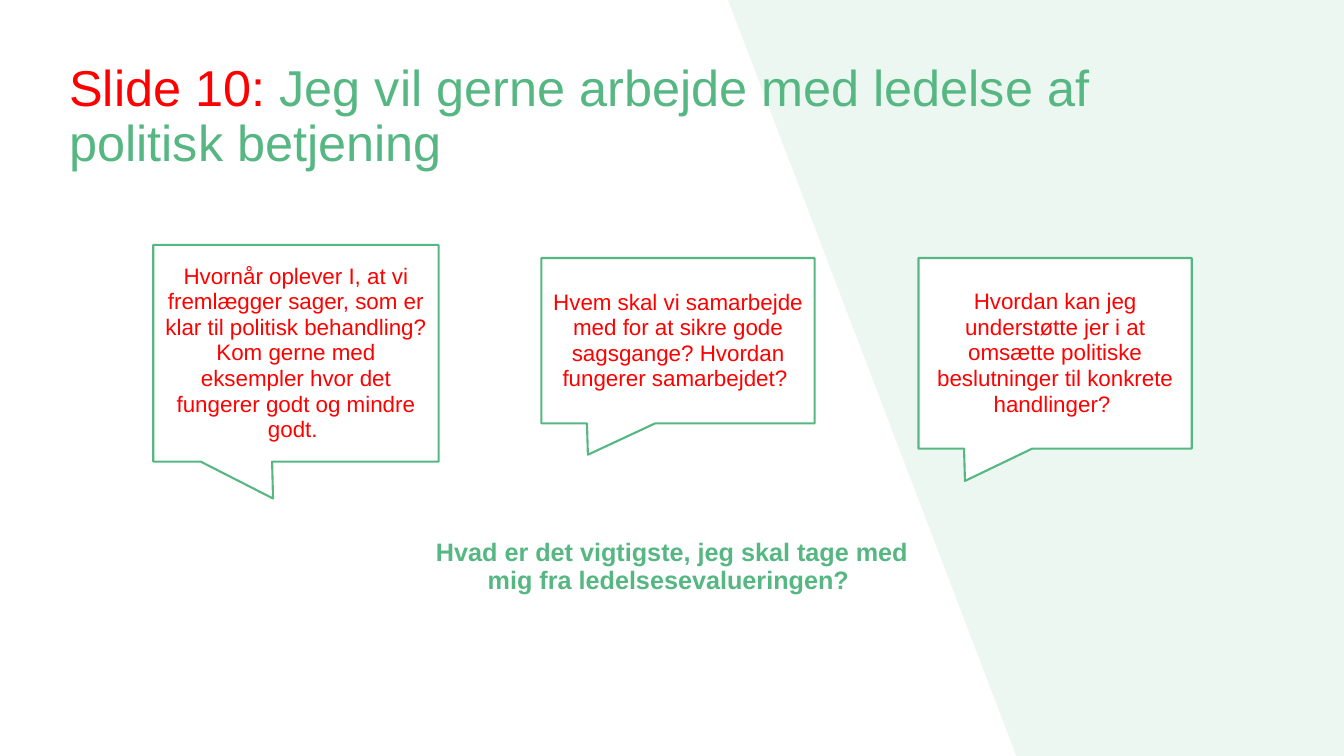
import pptx
import pptx.util
import pptx.dml.color
import pptx.enum.shapes
import pptx.enum.text
import lxml.etree

THEME = {
    "font": "Arial",
    "green": pptx.dml.color.RGBColor(0x56, 0xB7, 0x83),
    "red": pptx.dml.color.RGBColor(0xFF, 0x00, 0x00),
    "white": pptx.dml.color.RGBColor(0xFF, 0xFF, 0xFF),
    "title": 36, "bubble": 16, "closing": 18, "line": 1.5,
}
W, H = 13.33, 7.5
inch, pt = pptx.util.Inches, pptx.util.Pt
align, anchor = pptx.enum.text.PP_ALIGN, pptx.enum.text.MSO_ANCHOR


def write(s, runs, size, spacing, alignment, vertical, bold=False):
    """Fill a shape with one paragraph of (text, colour) runs."""
    tf = s.text_frame
    for name, value in {"word_wrap": True, "vertical_anchor": vertical}.items():
        setattr(tf, name, value)
    p = tf.paragraphs[0]
    for name, value in {"alignment": alignment, "line_spacing": spacing}.items():
        setattr(p, name, value)
    for text, colour in runs:
        r = p.add_run()
        r.text = text
        for name, value in {"name": THEME["font"], "size": pt(THEME[size]), "bold": bold}.items():
            setattr(r.font, name, value)
        r.font.color.rgb = THEME[colour]


prs = pptx.Presentation()
prs.slide_width, prs.slide_height = inch(W), inch(H)
slide = prs.slides.add_slide(prs.slide_layouts[6])

# Pale slanted panel on the right
outline = slide.shapes.build_freeform(inch(7.22), 0)
outline.add_line_segments([(inch(x), inch(y)) for x, y in ((W, 0), (W, H), (10.08, H))])
panel = outline.convert_to_shape()
panel.shadow.inherit = False
panel.line.fill.background()
panel.fill.solid()
panel.fill.fore_color.rgb = THEME["green"]
ns = "{http://schemas.openxmlformats.org/drawingml/2006/main}"
colour = panel.fill._xPr.find(f"{ns}solidFill/{ns}srgbClr")
lxml.etree.SubElement(colour, f"{ns}alpha").set("val", "10000")

# Title
title = slide.shapes.add_textbox(inch(0.59), inch(0.58), inch(10.47), inch(1.11))
write(title, [("Slide 10: ", "red"),
              ("Jeg vil gerne arbejde med ledelse af politisk betjening", "green")],
      "title", 0.9, align.LEFT, anchor.TOP)

# Speech bubbles: left, top, width, height, tail position, question
bubbles = [
    (1.52, 2.43, 2.83, 2.15, (-0.08, 0.67),
     "Hvornår oplever I, at vi fremlægger sager, som er klar til politisk behandling? "
     "Kom gerne med eksempler hvor det fungerer godt og mindre godt. "),
    (5.37, 2.56, 2.71, 1.64, (-0.33, 0.69),
     "Hvem skal vi samarbejde med for at sikre gode sagsgange? "
     "Hvordan fungerer samarbejdet? "),
    (9.11, 2.56, 2.71, 1.89, (-0.33, 0.67),
     "Hvordan kan jeg understøtte jer i at omsætte politiske beslutninger "
     "til konkrete handlinger? "),
]
for left, top, width, height, tail, question in bubbles:
    s = slide.shapes.add_shape(pptx.enum.shapes.MSO_SHAPE.RECTANGULAR_CALLOUT,
                               inch(left), inch(top), inch(width), inch(height))
    s.shadow.inherit = False
    s.adjustments[0], s.adjustments[1] = tail
    s.fill.solid()
    s.fill.fore_color.rgb = THEME["white"]
    s.line.color.rgb = THEME["green"]
    s.line.width = pt(THEME["line"])
    write(s, [(question, "red")], "bubble", 0.95, align.CENTER, anchor.MIDDLE)

# Closing question, centred on the slide
closing = slide.shapes.add_textbox(inch((W - 4.93) / 2), inch(5.29), inch(4.93), inch(0.68))
write(closing, [("Hvad er det vigtigste, jeg skal tage med mig fra ledelsesevalueringen? ", "green")],
      "closing", 0.95, align.CENTER, anchor.TOP, bold=True)

prs.save("out.pptx")
